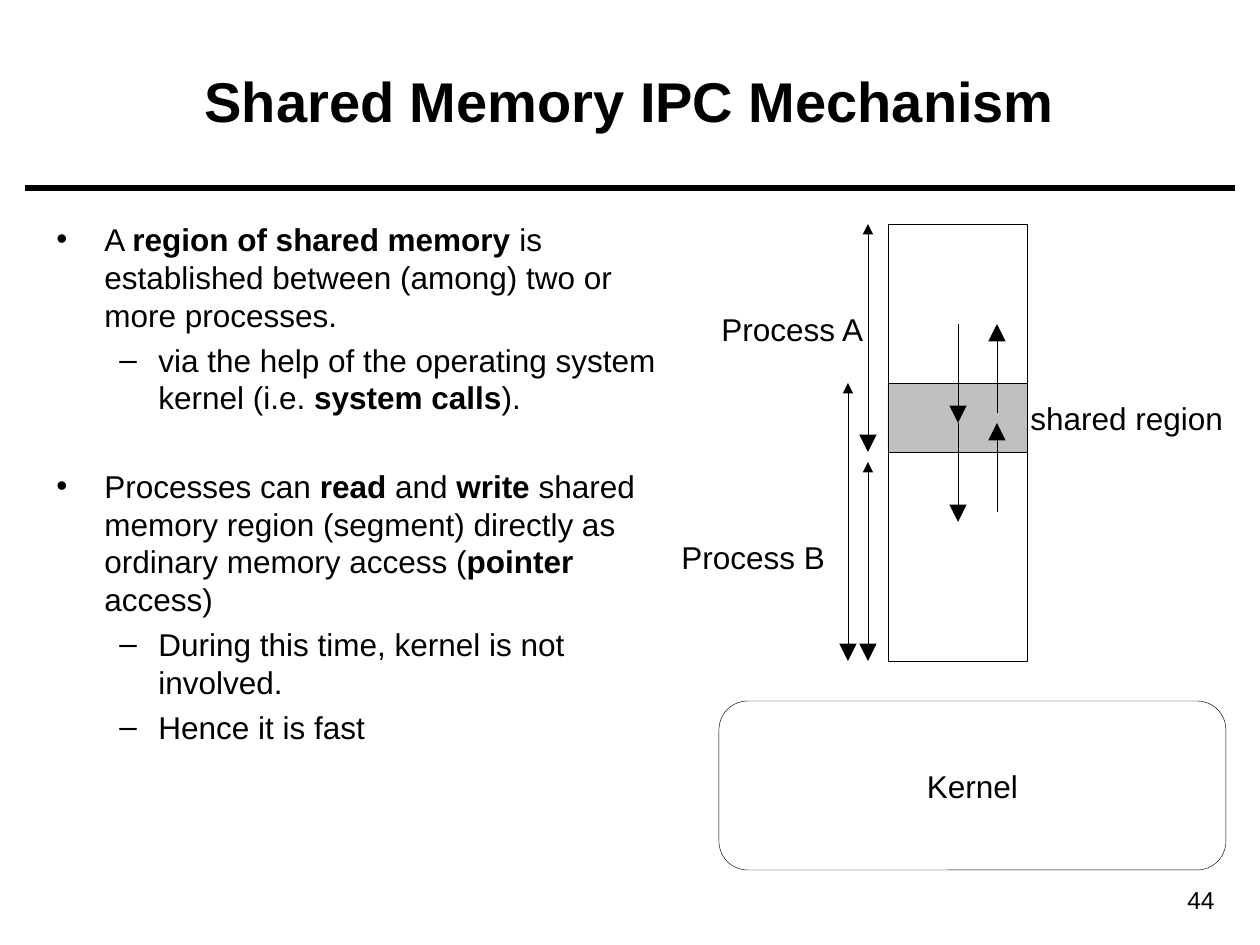
import pptx
import pptx.util
import pptx.dml.color
import pptx.enum.shapes
import pptx.enum.text
import pptx.oxml.ns
import lxml.etree

PX = 914400 / 126
FONT = "Arial"
BLACK = "000000"
GREY = "C0C0C0"
SHAPE = pptx.enum.shapes.MSO_SHAPE
ALIGN = pptx.enum.text.PP_ALIGN
ANCHOR = pptx.enum.text.MSO_ANCHOR

BODY = [
    (0, 4, [("A ", False), ("region of shared memory", True),
            (" is established between (among) two or more processes.", False)]),
    (1, 4, [("via the help of the operating system kernel (i.e. ", False),
            ("system calls", True), (").", False)]),
    (0, 29, [("Processes can ", False), ("read", True), (" and ", False), ("write", True),
             (" shared memory region (segment) directly as ordinary memory access (", False),
             ("pointer", True), (" access)", False)]),
    (1, 4, [("During this time, kernel is not involved.", False)]),
    (1, 4, [("Hence it is fast", False)]),
]
LEVELS = [("•", 48, -48), ("–", 102, -39)]


def emu(px):
    """Turn pixels into EMU."""
    return pptx.util.Emu(round(px * PX))


def color(hex_value):
    """Turn a hex string into a colour."""
    return pptx.dml.color.RGBColor.from_string(hex_value)


def add_run(p, text, size, bold=False):
    """Append one formatted run to a paragraph."""
    r = p.add_run()
    r.text = text
    r.font.name = FONT
    r.font.size = pptx.util.Pt(size)
    r.font.bold = bold
    r.font.color.rgb = color(BLACK)


def add_text(s, x, y, w, h, wrap=True, anchor=ANCHOR.TOP):
    """Add an empty text box and return its text frame."""
    tf = s.shapes.add_textbox(*map(emu, (x, y, w, h))).text_frame
    tf.word_wrap = wrap
    tf.vertical_anchor = anchor
    return tf


def add_label(s, text, x, y, w):
    """Add a one-line label."""
    tf = add_text(s, x, y, w, 50, wrap=False)
    add_run(tf.paragraphs[0], text, 18)


def add_box(s, kind, x, y, w, h, fill=None):
    """Add a thinly outlined shape."""
    sp = s.shapes.add_shape(kind, *map(emu, (x, y, w, h)))
    sp.shadow.inherit = False
    if fill:
        sp.fill.solid()
        sp.fill.fore_color.rgb = color(fill)
    else:
        sp.fill.background()
    sp.line.color.rgb = color(BLACK)
    sp.line.width = pptx.util.Pt(0.25)
    return sp


def add_line(s, x1, y1, x2, y2, width=0.25, head=None, tail=None):
    """Add a straight line with optional arrowheads of the given sizes."""
    c = s.shapes.add_connector(pptx.enum.shapes.MSO_CONNECTOR.STRAIGHT,
                               *map(emu, (x1, y1, x2, y2)))
    c.line.color.rgb = color(BLACK)
    c.line.width = pptx.util.Pt(width)
    qn = pptx.oxml.ns.qn
    for tag, size in (("a:headEnd", head), ("a:tailEnd", tail)):
        if size:
            lxml.etree.SubElement(c.line._get_or_add_ln(), qn(tag),
                                  type="triangle", w=size, len=size)
    lxml.etree.SubElement(c._element.spPr, qn("a:effectLst"))


def add_header(s, x, y, w, h):
    """Place the title and the rule beneath it."""
    tf = add_text(s, x + 19, y + 21, w - 38, 158, anchor=ANCHOR.MIDDLE)
    p = tf.paragraphs[0]
    p.alignment = ALIGN.CENTER
    add_run(p, "Shared Memory IPC Mechanism", 32, True)
    add_line(s, x, y + h, x + w, y + h, width=3)


def add_body(s, x, y, w, h):
    """Place the bulleted text."""
    tf = add_text(s, x, y, w, h)
    for i, (level, before, runs) in enumerate(BODY):
        p = tf.add_paragraph() if i else tf.paragraphs[0]
        p.level = level
        p.space_before = pptx.util.Pt(before)
        bullet, margin, indent = LEVELS[level]
        pPr = p._p.get_or_add_pPr()
        pPr.set("marL", str(emu(margin)))
        pPr.set("indent", str(emu(indent)))
        qn = pptx.oxml.ns.qn
        lxml.etree.SubElement(pPr, qn("a:buFont"), typeface=FONT)
        lxml.etree.SubElement(pPr, qn("a:buChar"), char=bullet)
        for text, bold in runs:
            add_run(p, text, 18, bold)


def add_memory(s, x, y, w, h):
    """Place the memory column, its extents and the data flow arrows."""
    left, width, shared_top, shared_end = x + 219, 139, y + 159, y + 228
    bottom = y + h
    add_box(s, SHAPE.RECTANGLE, left, y, width, shared_end - y)
    add_box(s, SHAPE.RECTANGLE, left, shared_end, width, bottom - shared_end)
    add_box(s, SHAPE.RECTANGLE, left, shared_top, width, shared_end - shared_top, GREY)
    for dx, top, end in ((20, y, shared_end), (20, shared_end + 10, bottom),
                         (40, shared_top, bottom)):
        add_line(s, left - dx, top, left - dx, end, head="med", tail="lg")
    for dx, start, end in ((70, 100, 199), (70, 199, 298), (109, 288, 199), (109, 189, 100)):
        add_line(s, left + dx, y + start, left + dx, y + end, tail="lg")
    add_label(s, "Process A", x + 40, y + 80, 169)
    add_label(s, "Process B", x, y + 308, 169)
    add_label(s, "shared region", x + w - 218, y + 169, 218)


def add_kernel(s, x, y, w, h):
    """Place the kernel box."""
    sp = add_box(s, SHAPE.ROUNDED_RECTANGLE, x, y, w, h)
    sp.adjustments[0] = 0.17
    tf = sp.text_frame
    tf.word_wrap = False
    tf.vertical_anchor = ANCHOR.MIDDLE
    p = tf.paragraphs[0]
    p.alignment = ALIGN.CENTER
    add_run(p, "Kernel", 18)


def add_page_number(s, x, y, w, h):
    """Place the page number."""
    p = add_text(s, x, y, w, h).paragraphs[0]
    p.alignment = ALIGN.RIGHT
    add_run(p, "44", 14)


def main():
    """Build and save the slide."""
    prs = pptx.Presentation()
    prs.slide_width, prs.slide_height = emu(1260), emu(945)
    s = prs.slides.add_slide(prs.slide_layouts[6])
    add_header(s, 25, 0, 1210, 188)
    add_body(s, 44, 214, 625, 645)
    add_memory(s, 669, 224, 567, 437)
    add_kernel(s, 719, 701, 507, 169)
    add_page_number(s, 1096, 879, 131, 43)
    prs.save("out.pptx")


if __name__ == "__main__":
    main()
